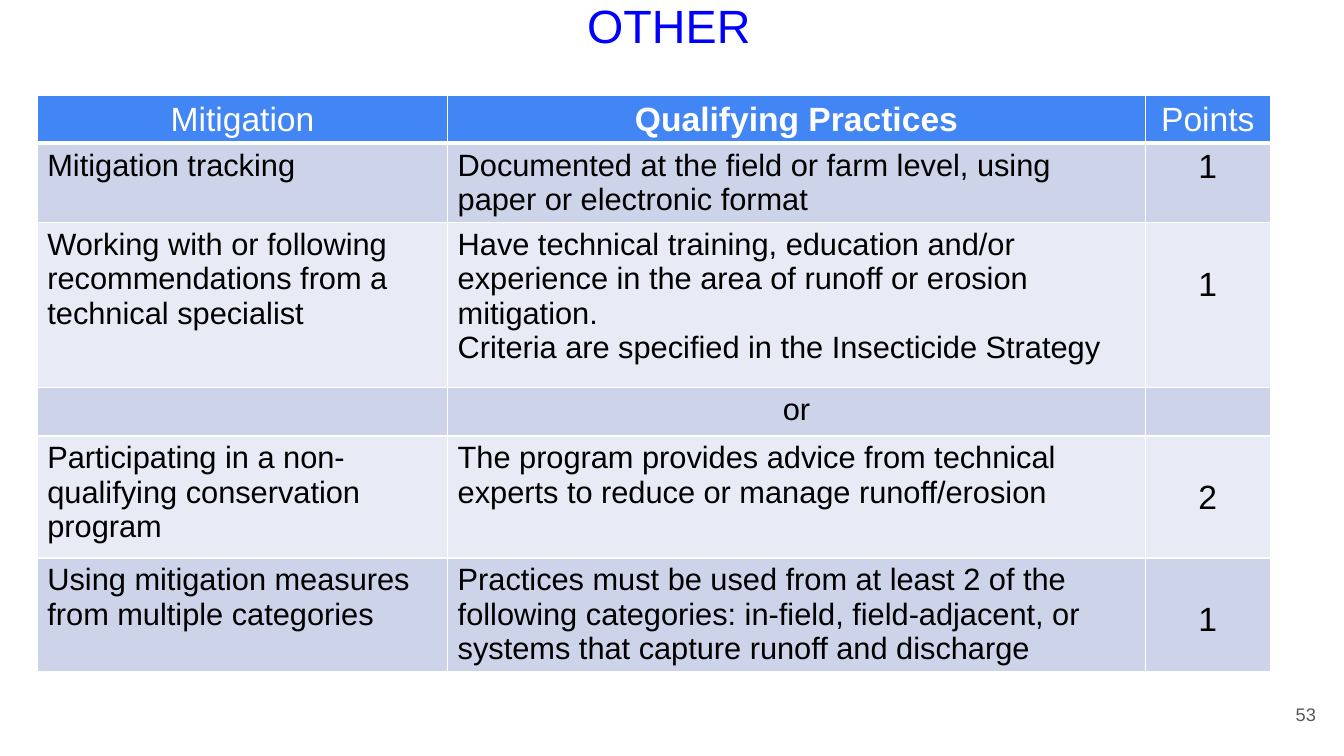
from lxml.etree import SubElement
from pptx import Presentation
from pptx.dml.color import RGBColor
from pptx.enum.text import MSO_ANCHOR, MSO_AUTO_SIZE, PP_ALIGN
from pptx.oxml.ns import qn
from pptx.util import Inches, Pt

# Content
TITLE = "OTHER"
PAGE_NUMBER = "53"
HEADER = ["Mitigation", "Qualifying Practices", "Points"]
ROWS = [
    ("Mitigation tracking",
     ["Documented at the field or farm level, using paper or electronic format"], "1"),
    ("Working with or following recommendations from a technical specialist",
     ["Have technical training, education and/or experience in the area of "
      "runoff or erosion mitigation.",
      "Criteria are specified in the Insecticide Strategy"], "1"),
    ("", ["or"], ""),
    ("Participating in a non-qualifying conservation program",
     ["The program provides advice from technical experts to reduce or manage "
      "runoff/erosion"], "2"),
    ("Using mitigation measures from multiple categories",
     ["Practices must be used from at least 2 of the following categories: in-field, "
      "field-adjacent, or systems that capture runoff and discharge"], "1"),
]

# Layout in inches
COLUMN_WIDTHS = [4.07, 6.92, 1.24]
ROW_HEIGHTS = [0.47, 0.78, 1.64, 0.48, 1.21, 1.12]
TABLE_LEFT, TABLE_TOP = 0.37, 0.95
INSET, LOWERED_INSET = 0.05, 0.43

FONT = "Arial"
BLUE = RGBColor(0x00, 0x00, 0xFF)
GRAY = RGBColor(0x59, 0x59, 0x59)
BLACK = RGBColor(0x00, 0x00, 0x00)
WHITE = RGBColor(0xFF, 0xFF, 0xFF)
HEADER_FILL = RGBColor(0x42, 0x85, 0xF4)
BAND_FILLS = [RGBColor(0xE8, 0xEB, 0xF5), RGBColor(0xCD, 0xD4, 0xEA)]


def write(frame, lines, size, color, align, bold=False):
    for index, line in enumerate(lines):
        para = frame.add_paragraph() if index else frame.paragraphs[0]
        para.alignment = align
        span = para.add_run()
        span.text = line
        span.font.name = FONT
        span.font.size = Pt(size)
        span.font.bold = bold
        span.font.color.rgb = color


def set_borders(cell, widths):
    properties = cell._tc.get_or_add_tcPr()
    for side, width in widths.items():
        line = SubElement(properties, qn(f"a:ln{side}"), w=str(Pt(width)))
        fill = SubElement(line, qn("a:solidFill"))
        SubElement(fill, qn("a:srgbClr"), val=str(WHITE))


def place(box, left, top, width, height):
    box.left, box.top = Inches(left), Inches(top)
    box.width, box.height = Inches(width), Inches(height)


def main():
    deck = Presentation()
    deck.slide_width, deck.slide_height = Inches(13.33), Inches(7.5)
    page = deck.slides.add_slide(deck.slide_layouts[5])

    # Title
    title = page.shapes.title
    place(title, 0.92, 0.04, 11.43, 0.49)
    title.text_frame.auto_size = MSO_AUTO_SIZE.NONE
    title.text_frame.vertical_anchor = MSO_ANCHOR.MIDDLE
    write(title.text_frame, [TITLE], 33.3, BLUE, PP_ALIGN.CENTER)
    title.text_frame.paragraphs[0].line_spacing = 0.9

    # Table grid
    table = page.shapes.add_table(
        len(ROW_HEIGHTS), len(COLUMN_WIDTHS), Inches(TABLE_LEFT), Inches(TABLE_TOP),
        Inches(sum(COLUMN_WIDTHS)), Inches(sum(ROW_HEIGHTS))).table
    for column, width in zip(table.columns, COLUMN_WIDTHS):
        column.width = Inches(width)
    for row, height in zip(table.rows, ROW_HEIGHTS):
        row.height = Inches(height)

    # Header row
    for index, heading in enumerate(HEADER):
        cell = table.cell(0, index)
        set_borders(cell, {"L": 1, "R": 1, "T": 1, "B": 3})
        cell.fill.solid()
        cell.fill.fore_color.rgb = HEADER_FILL
        write(cell.text_frame, [heading], 24, WHITE, PP_ALIGN.CENTER, bold=index == 1)

    # Body rows
    for number, (mitigation, practices, points) in enumerate(ROWS, start=1):
        for index, lines in enumerate([[mitigation], practices, [points]]):
            cell = table.cell(number, index)
            set_borders(cell, {"L": 1, "R": 1, "T": 3 if number == 1 else 1, "B": 1})
            cell.fill.solid()
            cell.fill.fore_color.rgb = BAND_FILLS[number % 2]
            if not any(lines):
                continue
            is_points = index == 2
            lowered = is_points and number > 1
            cell.margin_top = Inches(LOWERED_INSET if lowered else INSET)
            centered = is_points or not mitigation
            write(cell.text_frame, lines, 24 if is_points else 22, BLACK,
                  PP_ALIGN.CENTER if centered else PP_ALIGN.LEFT)

    # Page number
    box = page.shapes.add_textbox(0, 0, 0, 0)
    place(box, 12.35, 6.8, 0.8, 0.57)
    box.text_frame.word_wrap = True
    box.text_frame.vertical_anchor = MSO_ANCHOR.MIDDLE
    write(box.text_frame, [PAGE_NUMBER], 13, GRAY, PP_ALIGN.RIGHT)

    deck.save("out.pptx")


if __name__ == "__main__":
    main()
